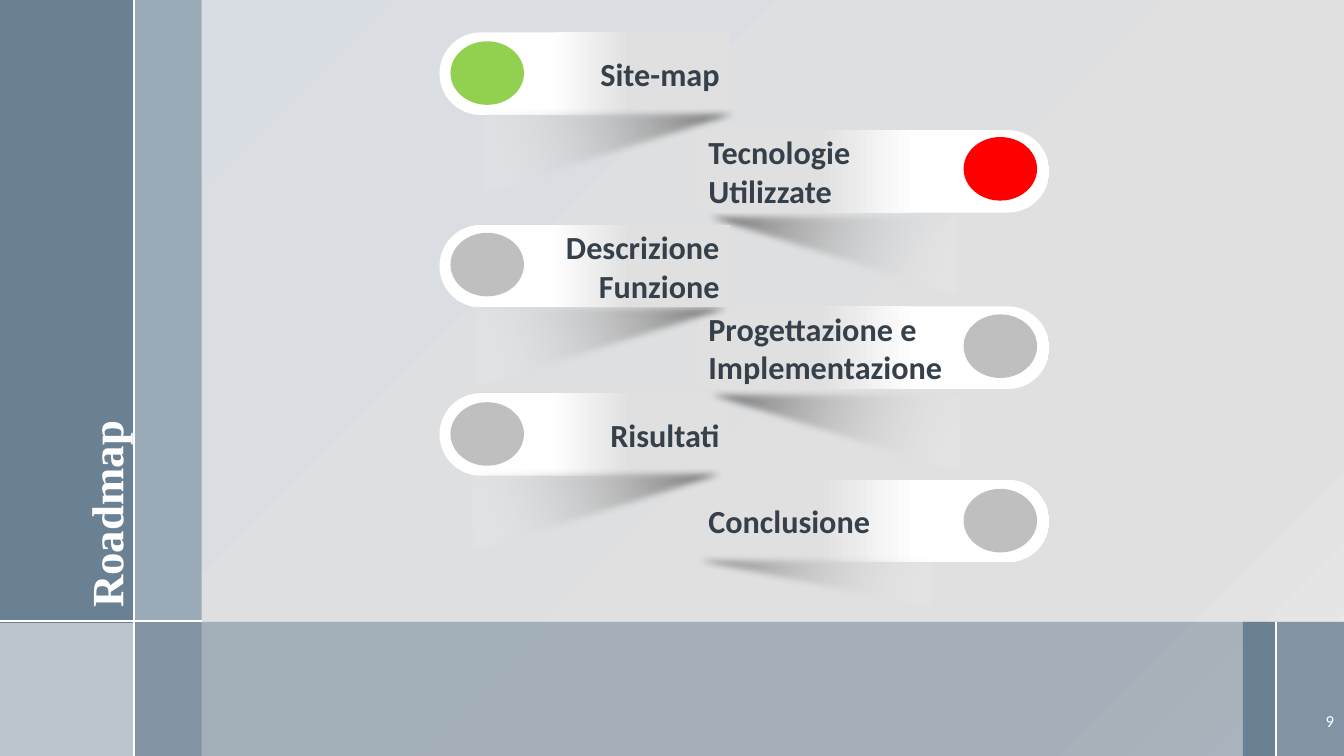
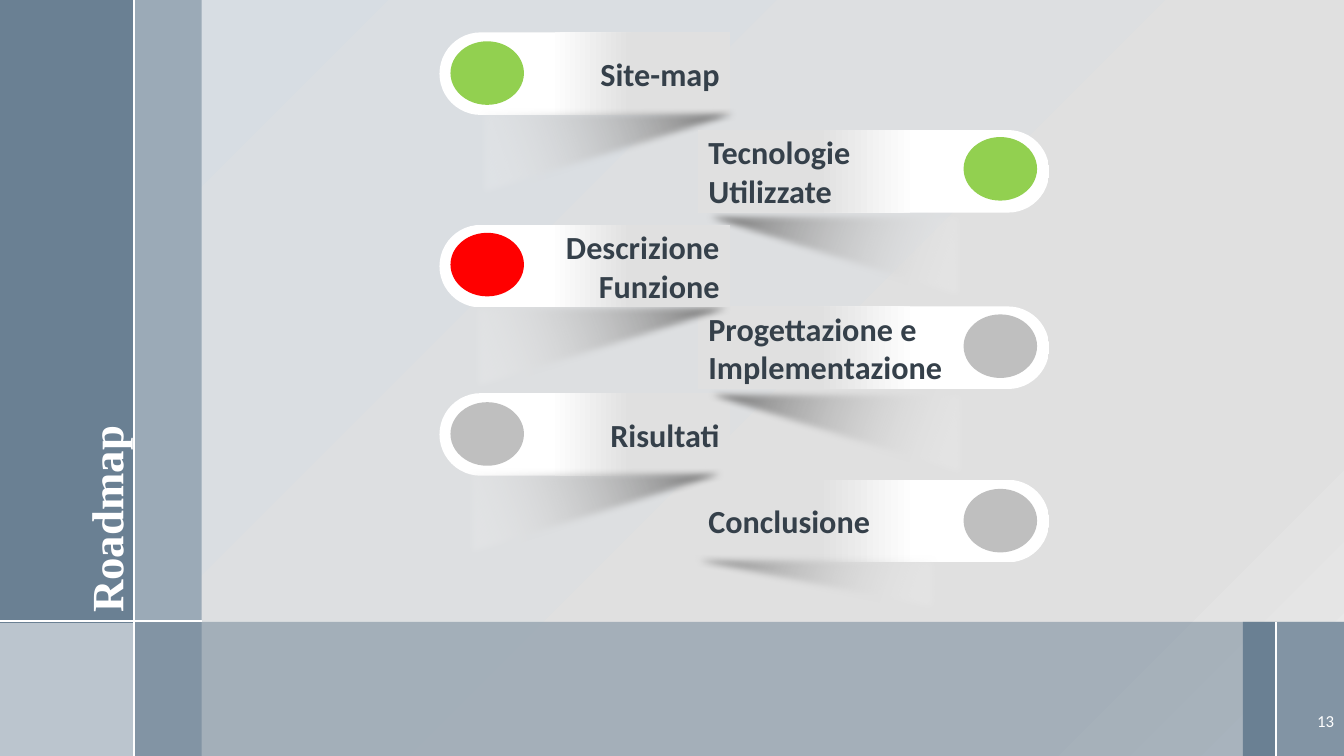
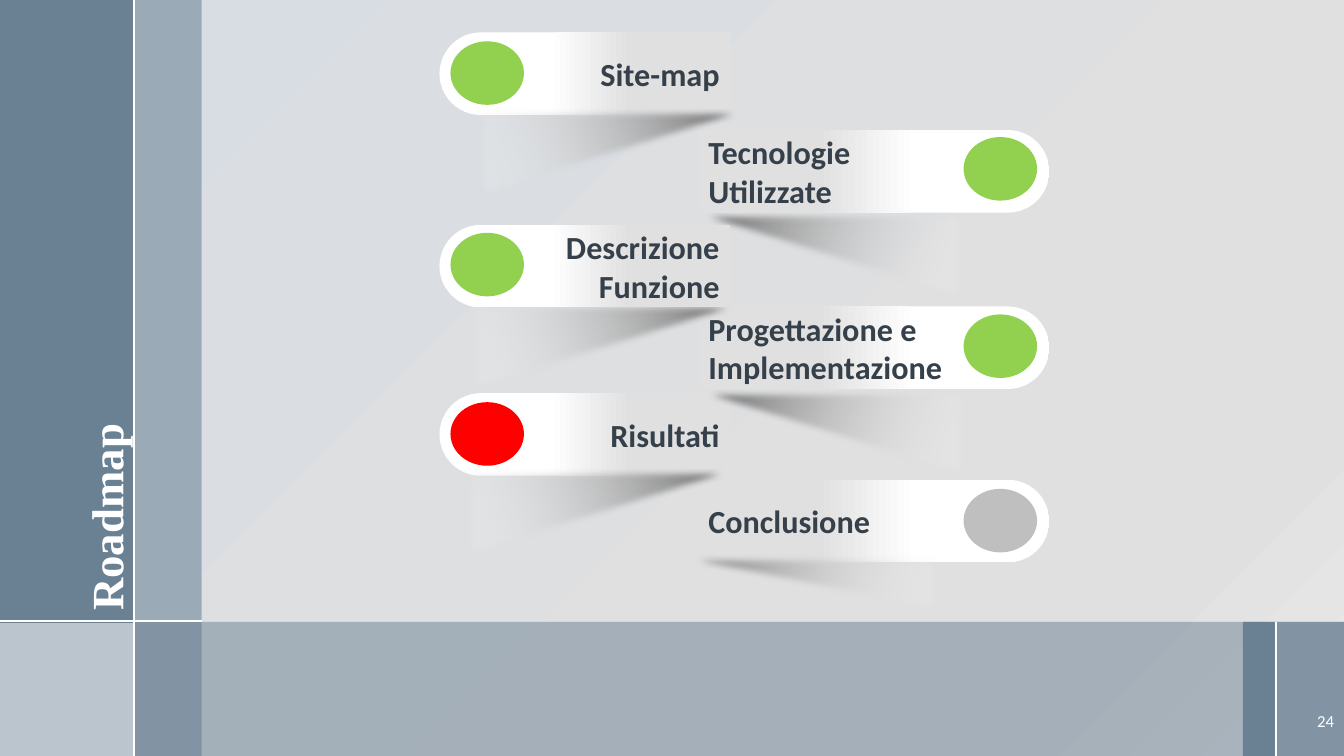
from collections import namedtuple

from lxml import etree
from pptx import Presentation
from pptx.dml.color import RGBColor
from pptx.enum import shapes as kinds, text as layout_text
from pptx.oxml.ns import qn
from pptx.util import Pt

WHITE = RGBColor(0xFF, 0xFF, 0xFF)
SLATE = RGBColor(0x6A, 0x80, 0x93)
MIST = RGBColor(0x9B, 0xAA, 0xB7)
PALE = RGBColor(0xD7, 0xDD, 0xE3)
SILVER = RGBColor(0xE0, 0xE0, 0xE0)
LIGHT_SILVER = RGBColor(0xEA, 0xEA, 0xEA)
SHADE = RGBColor(0x80, 0x80, 0x80)
INK = RGBColor(0x35, 0x40, 0x4A)
DONE = RGBColor(0x92, 0xD0, 0x50)
CURRENT = RGBColor(0xFF, 0x00, 0x00)
WAITING = RGBColor(0xBF, 0xBF, 0xBF)

BODY_FONT = "Calibri"
TITLE_FONT = "Times New Roman"
WIDTH, HEIGHT = 960, 540
BAND_TOP = 444.2
BAND_HEIGHT = HEIGHT - BAND_TOP
COLUMN = 96
NUMBER_LEFT = 911.5

BACKGROUND_STOPS = [(0, PALE, 100), (74, SILVER, 100), (83, SILVER, 100), (100, LIGHT_SILVER, 100)]
BAR_STOPS = [(38, WHITE, 100), (66, SILVER, 100), (92, SILVER, 100)]
FOLD_STOPS = [(0, WHITE, 12), (79, SHADE, 100)]

BAR_HEIGHT = 59
LIGHT_SIZE = (52.5, 45.4)
FOLD_SIZE = (217.4, 67.7)

Side = namedtuple("Side", "center length light_left vert align flipped")
LEFT = Side(417.6, 207.4, 321.8, "vert", layout_text.PP_ALIGN.RIGHT, False)
RIGHT = Side(624.2, 250.6, 688.3, "vert270", layout_text.PP_ALIGN.LEFT, True)

Step = namedtuple("Step", "label side middle light_top fold fold_size front")
STEPS = [
    Step("Site-map", LEFT, 52.6, 29.5, (341.3, 77), FOLD_SIZE, False),
    Step("Tecnologie\nUtilizzate", RIGHT, 122.4, 97.9, (471.6, 150.5), FOLD_SIZE, True),
    Step("Descrizione\nFunzione", LEFT, 190.1, 166.3, (337, 215.3), FOLD_SIZE, True),
    Step("Progettazione e\nImplementazione", RIGHT, 248.4, 224.6, (473, 277.2), FOLD_SIZE, False),
    Step("Risultati", LEFT, 310.3, 287.3, (332.6, 334.1), FOLD_SIZE, False),
    Step("Conclusione", RIGHT, 372.2, 349.2, (448.6, 396), (221.8, 43.9), False),
]

Page = namedtuple("Page", "number current title_box")
PAGES = [
    Page("9", 1, (-33.8, 308.9, 203.8, 61.2)),
    Page("13", 2, (-33.8, 312.5, 203.8, 61.2)),
    Page("24", 4, (-7.9, 337, 151.9, 61.2)),
]


def set_gradient(fill, element, stops, angle):
    fill.gradient()
    gradient = element.xpath(".//a:gradFill")[0]
    for child in list(gradient):
        gradient.remove(child)
    stop_list = etree.SubElement(gradient, qn("a:gsLst"))
    for position, color, opacity in stops:
        stop = etree.SubElement(stop_list, qn("a:gs"), pos=str(position * 1000))
        shade = etree.SubElement(stop, qn("a:srgbClr"), val=str(color))
        if opacity < 100:
            etree.SubElement(shade, qn("a:alpha"), val=str(opacity * 1000))
    etree.SubElement(gradient, qn("a:lin"), ang=str(angle * 60000), scaled="0")


def add_plain_shape(slide, kind, left, top, width, height):
    shape = slide.shapes.add_shape(kind, Pt(left), Pt(top), Pt(width), Pt(height))
    shape.shadow.inherit = False
    shape.line.fill.background()
    return shape


def add_solid(slide, kind, box, color, opacity=100):
    shape = add_plain_shape(slide, kind, *box)
    shape.fill.solid()
    shape.fill.fore_color.rgb = color
    if opacity < 100:
        shade = shape.element.xpath("./p:spPr/a:solidFill/a:srgbClr")[0]
        etree.SubElement(shade, qn("a:alpha"), val=str(opacity * 1000))
    return shape


def add_rule(slide, x1, y1, x2, y2):
    rule = slide.shapes.add_connector(
        kinds.MSO_CONNECTOR.STRAIGHT, Pt(x1), Pt(y1), Pt(x2), Pt(y2))
    rule.line.color.rgb = WHITE
    rule.line.width = Pt(1.5)
    etree.SubElement(rule.element.spPr, qn("a:effectLst"))
    return rule


def format_text(frame, font_name, size, color, bold, align):
    for paragraph in frame.paragraphs:
        paragraph.alignment = align
        for run in paragraph.runs:
            run.font.name = font_name
            run.font.size = Pt(size)
            run.font.bold = bold
            run.font.color.rgb = color


def build_frame(slide, layout):
    set_gradient(layout.background.fill, layout.element, BACKGROUND_STOPS, 45)
    rectangle = kinds.MSO_SHAPE.RECTANGLE
    parts = [
        add_solid(slide, rectangle, (NUMBER_LEFT, BAND_TOP, WIDTH - NUMBER_LEFT, BAND_HEIGHT), MIST),
        add_solid(slide, rectangle, (887.8, BAND_TOP, NUMBER_LEFT - 887.8, BAND_HEIGHT), SLATE),
        add_solid(slide, rectangle, (COLUMN, 0, COLUMN / 2, HEIGHT), MIST),
        add_solid(slide, rectangle, (0, 0, COLUMN, HEIGHT), SLATE),
        add_solid(slide, rectangle, (0, BAND_TOP, WIDTH, BAND_HEIGHT), SLATE, 50),
        add_rule(slide, NUMBER_LEFT, BAND_TOP, NUMBER_LEFT, HEIGHT),
        add_solid(slide, rectangle, (0, 445, COLUMN, HEIGHT - 445), PALE, 75),
        add_rule(slide, COLUMN, 0, COLUMN, HEIGHT),
        add_rule(slide, 0, 443.5, COLUMN * 1.5, 443.5),
    ]
    for identifier, part in enumerate(parts, 100):
        part.element.xpath(".//p:cNvPr")[0].set("id", str(identifier))
        layout.shapes.element.append(part.element)


def set_title(slide, box):
    title = slide.shapes.title
    title.left, title.top, title.width, title.height = map(Pt, box)
    title.rotation = 270
    frame = title.text_frame
    frame.text = "Roadmap"
    frame.word_wrap = True
    frame.auto_size = layout_text.MSO_AUTO_SIZE.NONE
    frame.vertical_anchor = layout_text.MSO_ANCHOR.BOTTOM
    frame.paragraphs[0].line_spacing = 0.9
    format_text(frame, TITLE_FONT, 32, WHITE, True, layout_text.PP_ALIGN.LEFT)


def add_page_number(slide, number):
    box = slide.shapes.add_textbox(Pt(NUMBER_LEFT), Pt(500.4), Pt(WIDTH - NUMBER_LEFT), Pt(28.8))
    frame = box.text_frame
    frame.text = number
    frame.word_wrap = True
    frame.vertical_anchor = layout_text.MSO_ANCHOR.MIDDLE
    format_text(frame, BODY_FONT, 12, WHITE, False, layout_text.PP_ALIGN.RIGHT)


def add_bar(slide, step):
    side = step.side
    bar = add_plain_shape(
        slide, kinds.MSO_SHAPE.ROUND_2_SAME_RECTANGLE,
        side.center - BAR_HEIGHT / 2, step.middle - side.length / 2, BAR_HEIGHT, side.length)
    bar.adjustments[0] = 0.5
    bar.adjustments[1] = 0
    bar.rotation = 270
    if side.flipped:
        bar.element.spPr.xfrm.set("flipV", "1")
    set_gradient(bar.fill, bar.element, BAR_STOPS, 90)
    frame = bar.text_frame
    frame.text = step.label
    frame.word_wrap = True
    frame.vertical_anchor = layout_text.MSO_ANCHOR.MIDDLE
    bar.element.xpath(".//a:bodyPr")[0].set("vert", side.vert)
    format_text(frame, BODY_FONT, 23, INK, True, side.align)


def add_fold(slide, step):
    fold = add_plain_shape(slide, kinds.MSO_SHAPE.RIGHT_TRIANGLE, *step.fold, *step.fold_size)
    if step.side.flipped:
        fold.rotation = 180
    else:
        fold.element.spPr.xfrm.set("flipV", "1")
    set_gradient(fold.fill, fold.element, FOLD_STOPS, 20)
    effects = fold.element.xpath("./p:spPr/a:effectLst")[0]
    etree.SubElement(effects, qn("a:softEdge"), rad=str(Pt(5)))


def status_color(index, current):
    if index == current:
        return CURRENT
    return DONE if index < current else WAITING


def add_roadmap(slide, current):
    for step in STEPS:
        if not step.front:
            add_bar(slide, step)
    for step in STEPS:
        add_fold(slide, step)
    for step in STEPS:
        if step.front:
            add_bar(slide, step)
    for index, step in enumerate(STEPS):
        box = (step.side.light_left, step.light_top, *LIGHT_SIZE)
        add_solid(slide, kinds.MSO_SHAPE.OVAL, box, status_color(index, current))


def main():
    presentation = Presentation()
    presentation.slide_width = Pt(WIDTH)
    presentation.slide_height = Pt(HEIGHT)
    layout = presentation.slide_layouts[5]
    for index, page in enumerate(PAGES):
        slide = presentation.slides.add_slide(layout)
        if index == 0:
            build_frame(slide, layout)
        set_title(slide, page.title_box)
        add_page_number(slide, page.number)
        add_roadmap(slide, page.current)
    presentation.save("out.pptx")


if __name__ == "__main__":
    main()
